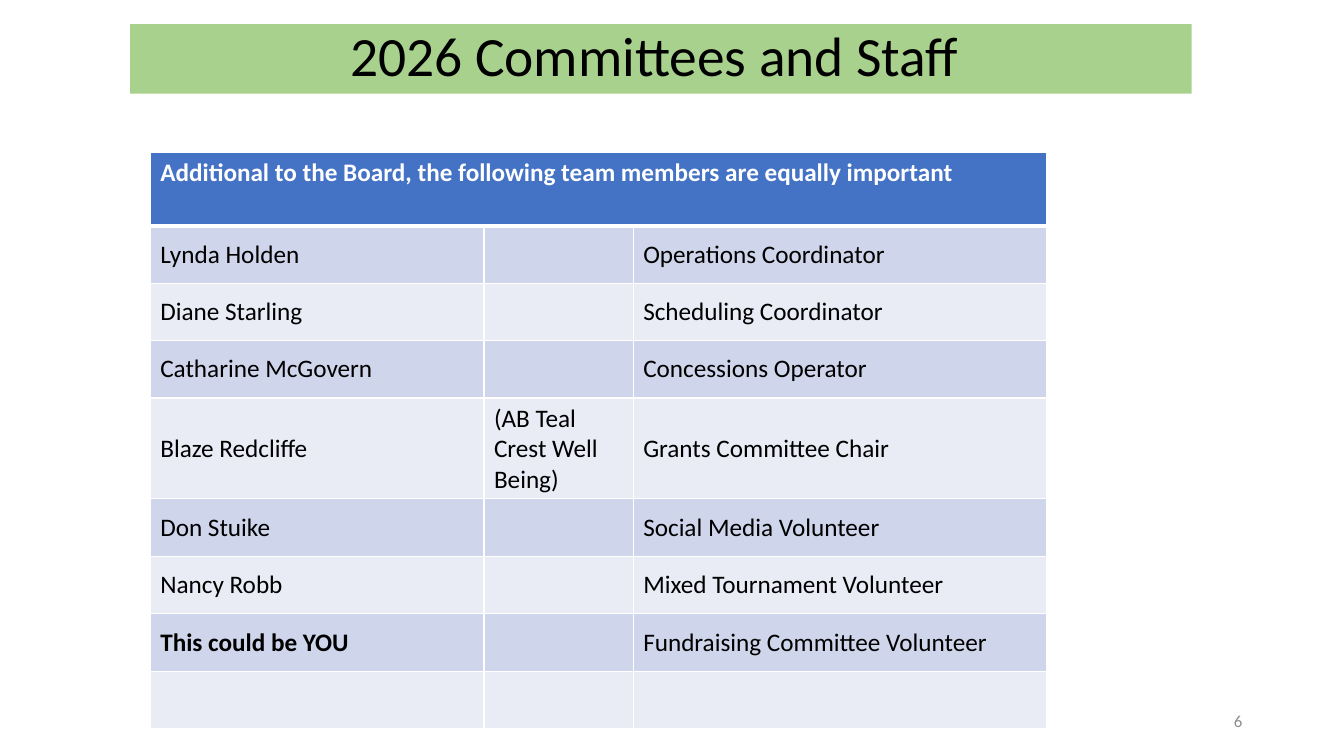
from lxml.etree import SubElement
from pptx import Presentation
from pptx.dml.color import RGBColor
from pptx.enum.text import MSO_ANCHOR, MSO_AUTO_SIZE, PP_ALIGN
from pptx.oxml.ns import qn
from pptx.util import Inches, Pt

TITLE = "2026 Committees and Staff "
HEADING = "Additional to the Board, the following team members are equally important"
PAGE = "6"
TEAM = [
    ("Lynda Holden", "", "Operations Coordinator"),
    ("Diane Starling", "", "Scheduling Coordinator"),
    ("Catharine McGovern", "", "Concessions Operator"),
    ("Blaze Redcliffe", "(AB Teal Crest Well Being)", "Grants Committee Chair"),
    ("Don Stuike", "", "Social Media Volunteer"),
    ("Nancy Robb", "", "Mixed Tournament Volunteer"),
    ("This could be YOU", "", "Fundraising Committee Volunteer"),
    ("", "", ""),
]
BOLD = {HEADING, "This could be YOU"}
COLS = (3.31, 1.48, 4.1)
HEAD_H, ROW_H = 0.73, 0.57
BANDS = ("CFD5EA", "E9EBF5")


def rgb(color):
    return RGBColor.from_string(color)


def style(p, size, color, bold=False):
    for r in p.runs:
        font = r.font
        font.name, font.size, font.bold = "Calibri", Pt(size), bold
        font.color.rgb = rgb(color)


def set_borders(cell, row):
    """White rules: 3 pt under the heading row, 1 pt elsewhere."""
    tc_pr = cell._tc.get_or_add_tcPr()
    for side in "LRTB":
        thick = (side, row) in (("B", 0), ("T", 1))
        ln = SubElement(tc_pr, qn(f"a:ln{side}"), w=str(Pt(3 if thick else 1)))
        SubElement(SubElement(ln, qn("a:solidFill")), qn("a:srgbClr"), val="FFFFFF")


def add_title(s):
    sp = s.shapes.title
    sp.left, sp.top, sp.width, sp.height = map(Inches, (1.29, 0.24, 10.53, 0.69))
    sp.fill.solid()
    sp.fill.fore_color.rgb = rgb("A9D18E")
    tf = sp.text_frame
    tf.text = TITLE
    tf.auto_size = MSO_AUTO_SIZE.NONE
    tf.vertical_anchor = MSO_ANCHOR.MIDDLE
    p = tf.paragraphs[0]
    p.alignment, p.line_spacing = PP_ALIGN.CENTER, 0.9
    style(p, 39.6, "000000")


def add_page_number(s):
    tf = s.shapes.add_textbox(*map(Inches, (9.42, 6.95, 3, 0.4))).text_frame
    tf.word_wrap = True
    tf.vertical_anchor = MSO_ANCHOR.MIDDLE
    tf.text = PAGE
    p = tf.paragraphs[0]
    p.alignment = PP_ALIGN.RIGHT
    style(p, 12, "8C8C8C")


def add_team_table(s):
    rows = [(HEADING, "", "")] + TEAM
    height = HEAD_H + ROW_H * len(TEAM)
    table = s.shapes.add_table(len(rows), len(COLS), Inches(1.49), Inches(1.51),
                               Inches(sum(COLS)), Inches(height)).table
    for col, width in zip(table.columns, COLS):
        col.width = Inches(width)
    for i, texts in enumerate(rows):
        table.rows[i].height = Inches(ROW_H if i else HEAD_H)
        for j, text in enumerate(texts):
            cell = table.cell(i, j)
            set_borders(cell, i)
            cell.fill.solid()
            cell.fill.fore_color.rgb = rgb(BANDS[(i - 1) % 2] if i else "4472C4")
            cell.vertical_anchor = MSO_ANCHOR.MIDDLE if i else MSO_ANCHOR.TOP
            if text:
                cell.text_frame.text = text
                style(cell.text_frame.paragraphs[0], 18,
                      "000000" if i else "FFFFFF", text in BOLD)
    table.cell(0, 0).merge(table.cell(0, len(COLS) - 1))


def main():
    prs = Presentation()
    prs.slide_width, prs.slide_height = Inches(13.33), Inches(7.5)
    s = prs.slides.add_slide(prs.slide_layouts[5])
    add_title(s)
    add_page_number(s)
    add_team_table(s)
    prs.save("out.pptx")


if __name__ == "__main__":
    main()
